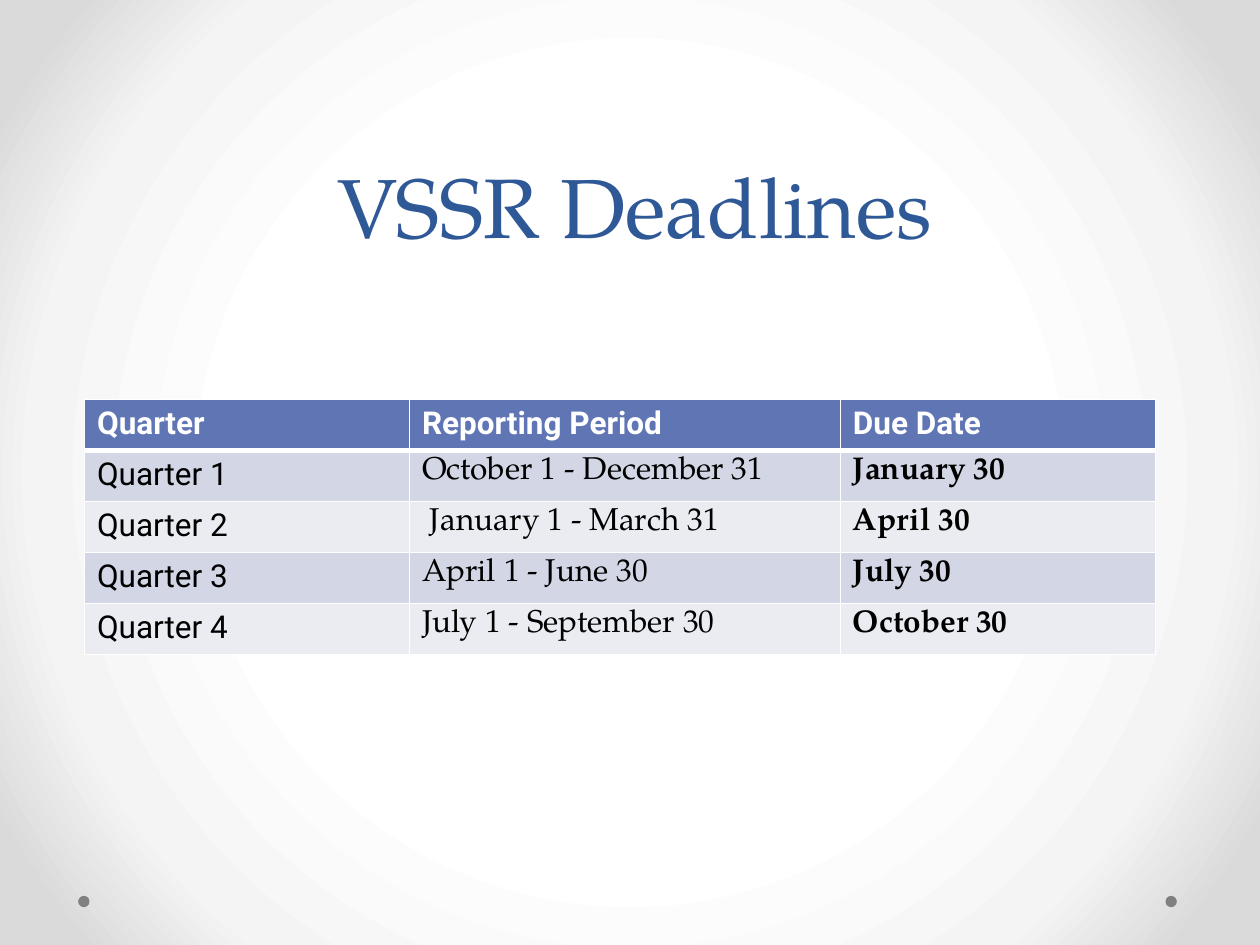
from lxml.etree import SubElement
from pptx import Presentation
from pptx.dml.color import RGBColor
from pptx.enum.shapes import MSO_SHAPE
from pptx.enum.text import MSO_ANCHOR, PP_ALIGN
from pptx.oxml.ns import qn
from pptx.util import Inches, Pt

TITLE = "VSSR Deadlines"
HEADER = ("Quarter", "Reporting Period", "Due Date")
DEADLINES = [
    ("Quarter 1", "October 1 - December 31", "January 30"),
    ("Quarter 2", " January 1 - March 31", "April 30"),
    ("Quarter 3", "April 1 - June 30", "July 30"),
    ("Quarter 4", "July 1 - September 30", "October 30"),
]
COLUMN_WIDTHS = (2.58, 3.42, 2.5)
ROW_HEIGHT = 0.405
DOT_LEFTS = (9.25, 0.62)
DOT_TOP, DOT_SIZE = 7.11, 0.09

SANS, SERIF = "Roboto", "TeX Gyre Pagella"
BODY_STYLES = ((SANS, False), (SERIF, False), (SERIF, True))  # font, bold per column

WHITE = RGBColor(0xFF, 0xFF, 0xFF)
BLACK = RGBColor(0, 0, 0)
TITLE_BLUE = RGBColor(0x2F, 0x58, 0x97)
HEADER_BLUE = RGBColor(0x60, 0x76, 0xB4)
BANDS = (RGBColor(0xD2, 0xD6, 0xE5), RGBColor(0xEA, 0xEC, 0xF2))
DOT_GRAY = RGBColor(0x80, 0x80, 0x80)
BACKGROUND_STOPS = (
    (50, WHITE),
    (76, RGBColor(0xF4, 0xF4, 0xF4)),
    (92, RGBColor(0xDA, 0xDA, 0xDA)),
)


def add_solid_fill(parent, color):
    fill = SubElement(parent, qn("a:solidFill"))
    SubElement(fill, qn("a:srgbClr"), val=str(color))


def paint_background(slide):
    """Fill the background with a circular gradient from the centre."""
    slide.background.fill.gradient()
    gradient = slide.element.find(".//" + qn("a:gradFill"))
    for child in list(gradient):
        gradient.remove(child)
    stops = SubElement(gradient, qn("a:gsLst"))
    for percent, color in BACKGROUND_STOPS:
        stop = SubElement(stops, qn("a:gs"), pos=str(percent * 1000))
        SubElement(stop, qn("a:srgbClr"), val=str(color))
    path = SubElement(gradient, qn("a:path"), path="circle")
    SubElement(path, qn("a:fillToRect"), l="50000", t="50000", r="50000", b="50000")


def add_run(paragraph, text, font_name, size, color, bold=False):
    run = paragraph.add_run()
    run.text = text
    run.font.name = font_name
    run.font.size = Pt(size)
    run.font.color.rgb = color
    run.font.bold = bold


def set_borders(cell, top=1, bottom=1):
    """Draw white cell borders, with widths in points."""
    properties = cell._tc.get_or_add_tcPr()
    widths = {"a:lnL": 1, "a:lnR": 1, "a:lnT": top, "a:lnB": bottom}
    for position, (tag, width) in enumerate(widths.items()):
        line = SubElement(properties, qn(tag), w=str(Pt(width)))
        add_solid_fill(line, WHITE)
        properties.insert(position, line)


def add_dots(slide):
    for left in DOT_LEFTS:
        dot = slide.shapes.add_shape(
            MSO_SHAPE.OVAL, Inches(left), Inches(DOT_TOP), Inches(DOT_SIZE), Inches(DOT_SIZE)
        )
        dot.shadow.inherit = False
        dot.fill.solid()
        dot.fill.fore_color.rgb = DOT_GRAY
        dot.line.fill.background()


def add_title(slide):
    box = slide.shapes.add_textbox(Inches(0.58), Inches(1), Inches(8.92), Inches(1.25))
    frame = box.text_frame
    frame.word_wrap = True
    frame.vertical_anchor = MSO_ANCHOR.MIDDLE
    paragraph = frame.paragraphs[0]
    paragraph.alignment = PP_ALIGN.CENTER
    paragraph.line_spacing = Pt(58)
    add_run(paragraph, TITLE, SERIF, 48, TITLE_BLUE)


def add_deadline_table(slide):
    rows = [HEADER] + DEADLINES
    table = slide.shapes.add_table(
        len(rows), len(HEADER), Inches(0.67), Inches(3.17),
        Inches(sum(COLUMN_WIDTHS)), Inches(ROW_HEIGHT * len(rows)),
    ).table
    for column, width in zip(table.columns, COLUMN_WIDTHS):
        column.width = Inches(width)
    for row_index, texts in enumerate(rows):
        table.rows[row_index].height = Inches(ROW_HEIGHT)
        is_header = row_index == 0
        for column_index, text in enumerate(texts):
            cell = table.cell(row_index, column_index)
            cell.fill.solid()
            cell.fill.fore_color.rgb = HEADER_BLUE if is_header else BANDS[(row_index - 1) % 2]
            set_borders(cell, top=3 if row_index == 1 else 1, bottom=3 if is_header else 1)
            font_name, bold = (SANS, True) if is_header else BODY_STYLES[column_index]
            color = WHITE if is_header else BLACK
            add_run(cell.text_frame.paragraphs[0], text, font_name, 18, color, bold)


def main():
    presentation = Presentation()
    presentation.slide_width = Inches(10)
    presentation.slide_height = Inches(7.5)
    slide = presentation.slides.add_slide(presentation.slide_layouts[6])
    paint_background(slide)
    add_dots(slide)
    add_title(slide)
    add_deadline_table(slide)
    presentation.save("out.pptx")


if __name__ == "__main__":
    main()
